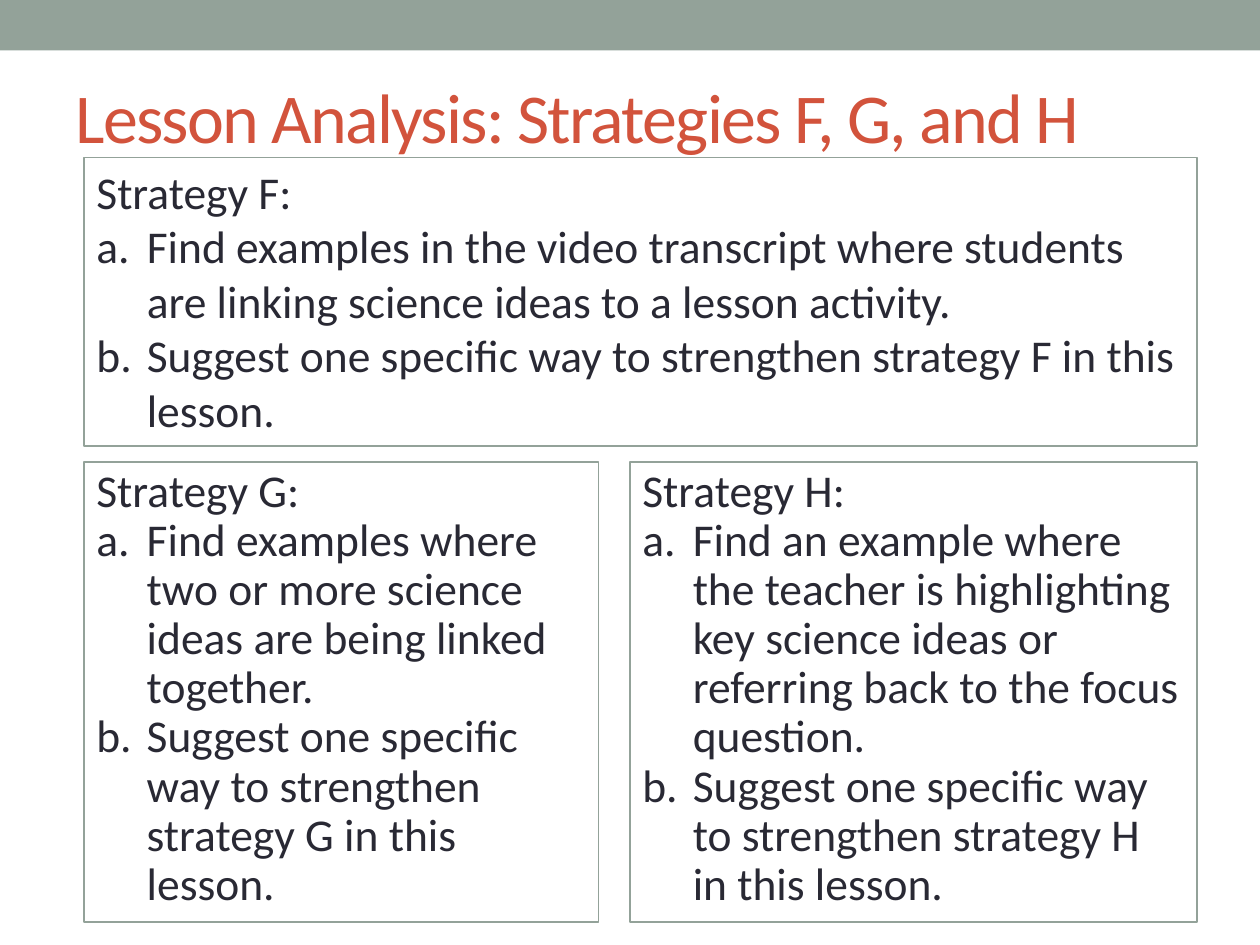
from dataclasses import dataclass

from lxml import etree
from pptx import Presentation
from pptx.dml.color import RGBColor
from pptx.enum.shapes import MSO_SHAPE
from pptx.enum.text import MSO_ANCHOR, MSO_AUTO_SIZE, PP_ALIGN
from pptx.oxml.ns import qn
from pptx.util import Pt

RECT = MSO_SHAPE.RECTANGLE
TOP, MIDDLE = MSO_ANCHOR.TOP, MSO_ANCHOR.MIDDLE
LEFT = PP_ALIGN.LEFT
FIXED, GROW = MSO_AUTO_SIZE.NONE, MSO_AUTO_SIZE.SHAPE_TO_FIT_TEXT


@dataclass(frozen=True)
class Theme:
    font: str = "Calibri"
    sage: RGBColor = RGBColor(0x93, 0xA2, 0x99)
    accent: RGBColor = RGBColor(0xD2, 0x53, 0x3C)
    ink: RGBColor = RGBColor(0x29, 0x29, 0x34)
    title_size: int = 40
    body_size: int = 26


THEME = Theme()
SLIDE_WIDTH, SLIDE_HEIGHT = 720, 540
INDENT = 28.8

# Panel edges: F spans the top, G and H share the bottom row
PANEL_LEFT, PANEL_RIGHT = 48, 684
G_WIDTH, H_LEFT = 294, 360
F_TOP, F_HEIGHT = 90, 164.9
ROW_TOP, ROW_HEIGHT = 264, 263

# letter, (left, top, width, height), line spacing, first task
STRATEGIES = [
    ("G", (PANEL_LEFT, ROW_TOP, G_WIDTH, ROW_HEIGHT), 0.9,
     "Find examples where two or more science ideas are being linked together."),
    ("H", (H_LEFT, ROW_TOP, PANEL_RIGHT - H_LEFT, ROW_HEIGHT), 0.9,
     "Find an example where the teacher is highlighting key science ideas "
     "or referring back to the focus question."),
    ("F", (PANEL_LEFT, F_TOP, PANEL_RIGHT - PANEL_LEFT, F_HEIGHT), 1.0,
     "Find examples in the video transcript where students are linking "
     "science ideas to a lesson activity."),
]


def apply(target, formats):
    for name, value in formats.items():
        setattr(target, name, value)


def write(paragraph, text, size, color):
    run = paragraph.add_run()
    run.text = text
    apply(run.font, {"name": THEME.font, "size": Pt(size)})
    run.font.color.rgb = color
    return run


def add_rect(slide, box):
    rect = slide.shapes.add_shape(RECT, *map(Pt, box))
    rect.shadow.inherit = False
    return rect


def add_banner(slide):
    banner = add_rect(slide, (0, 0, SLIDE_WIDTH, 28.8))
    banner.fill.solid()
    banner.fill.fore_color.rgb = THEME.sage
    banner.line.fill.background()


def set_title(slide, text):
    title = slide.shapes.title
    apply(title, {"left": Pt(36), "top": Pt(18), "width": Pt(642), "height": Pt(96)})
    apply(title.text_frame, {"vertical_anchor": MIDDLE, "word_wrap": True,
                             "auto_size": FIXED})
    heading = title.text_frame.paragraphs[0]
    heading.alignment = LEFT
    run = write(heading, text, THEME.title_size, THEME.accent)
    run.font._element.set("spc", "-100")


def number_paragraph(paragraph):
    """Letter the paragraph a., b., ... with a hanging indent."""
    properties = paragraph._p.get_or_add_pPr()
    properties.set("marL", str(Pt(INDENT)))
    properties.set("indent", str(-Pt(INDENT)))
    etree.SubElement(properties, qn("a:buFont"), typeface="+mj-lt")
    etree.SubElement(properties, qn("a:buAutoNum"), type="alphaLcPeriod")


def add_strategy(slide, letter, box, spacing, first_task):
    panel = add_rect(slide, box)
    panel.fill.background()
    panel.line.color.rgb = THEME.sage
    panel.line.width = Pt(0.75)
    frame = panel.text_frame
    apply(frame, {"vertical_anchor": TOP, "word_wrap": True, "auto_size": GROW})

    second_task = f"Suggest one specific way to strengthen strategy {letter} in this lesson."
    for i, text in enumerate((f"Strategy {letter}:", first_task, second_task)):
        paragraph = frame.add_paragraph() if i else frame.paragraphs[0]
        apply(paragraph, {"alignment": LEFT, "line_spacing": spacing})
        if i:
            number_paragraph(paragraph)
        write(paragraph, text, THEME.body_size, THEME.ink)


def main():
    deck = Presentation()
    apply(deck, {"slide_width": Pt(SLIDE_WIDTH), "slide_height": Pt(SLIDE_HEIGHT)})
    slide = deck.slides.add_slide(deck.slide_layouts[5])

    # Header
    add_banner(slide)
    set_title(slide, "Lesson Analysis: Strategies F, G, and H")

    # Strategy panels
    for strategy in STRATEGIES:
        add_strategy(slide, *strategy)

    deck.save("out.pptx")


if __name__ == "__main__":
    main()
